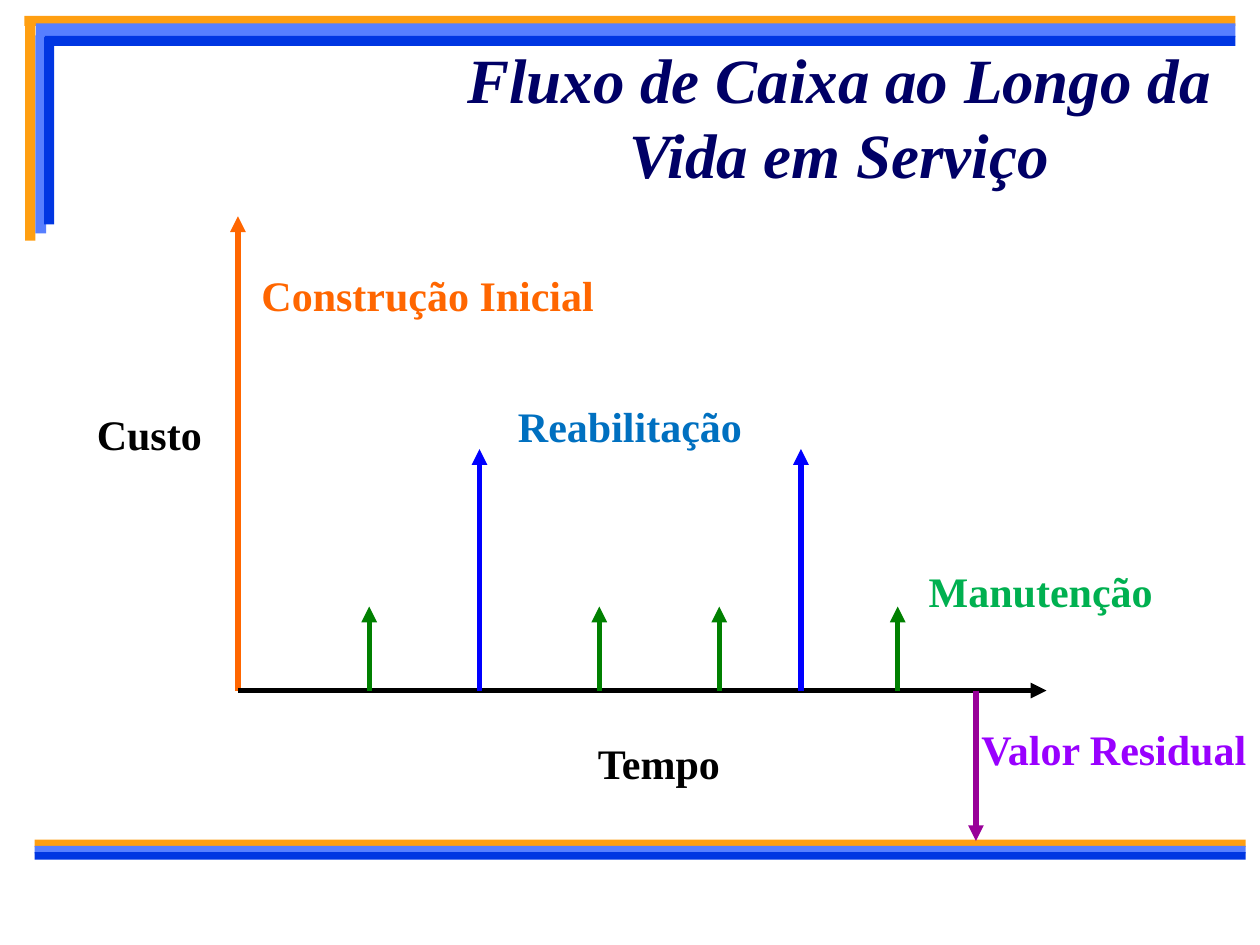
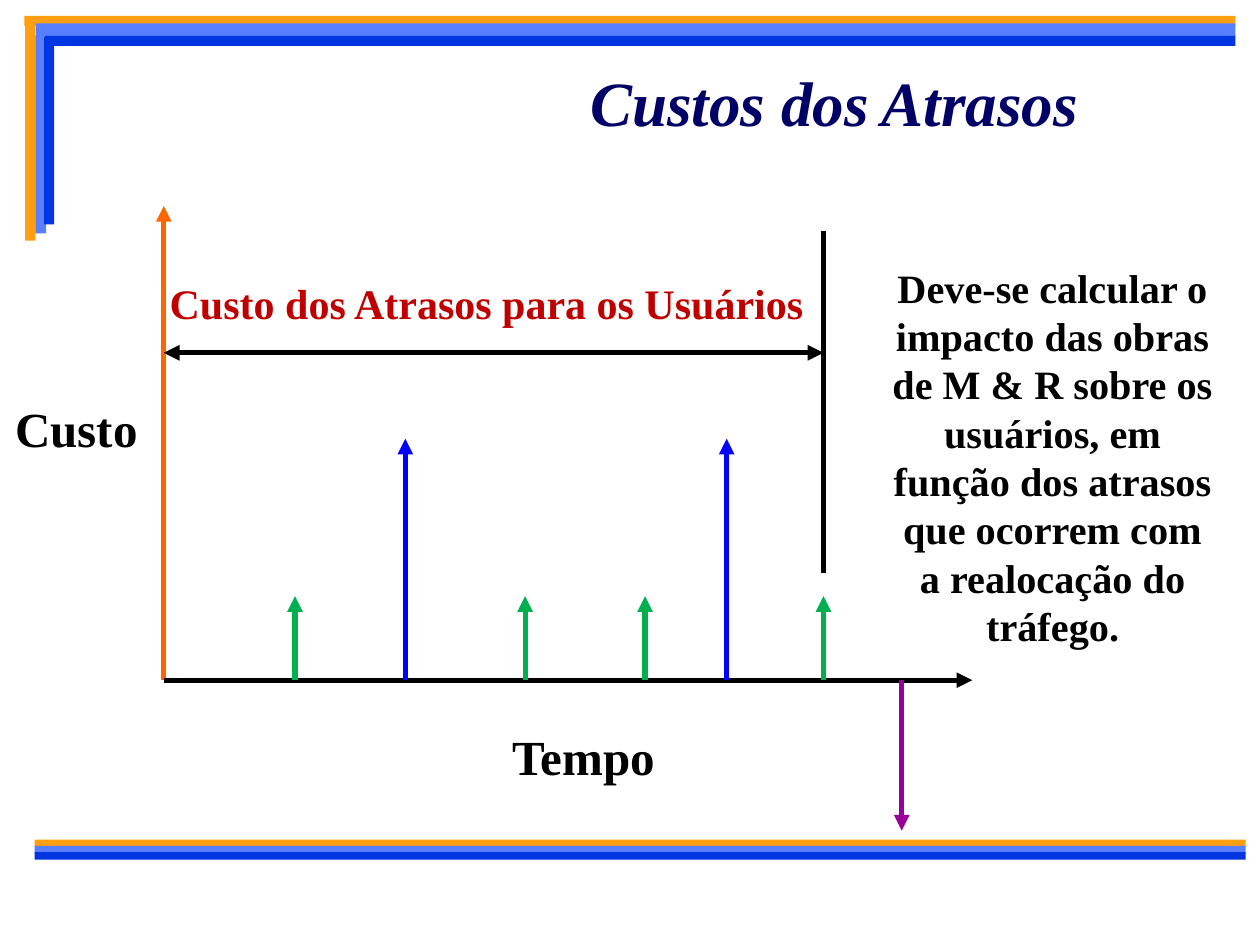
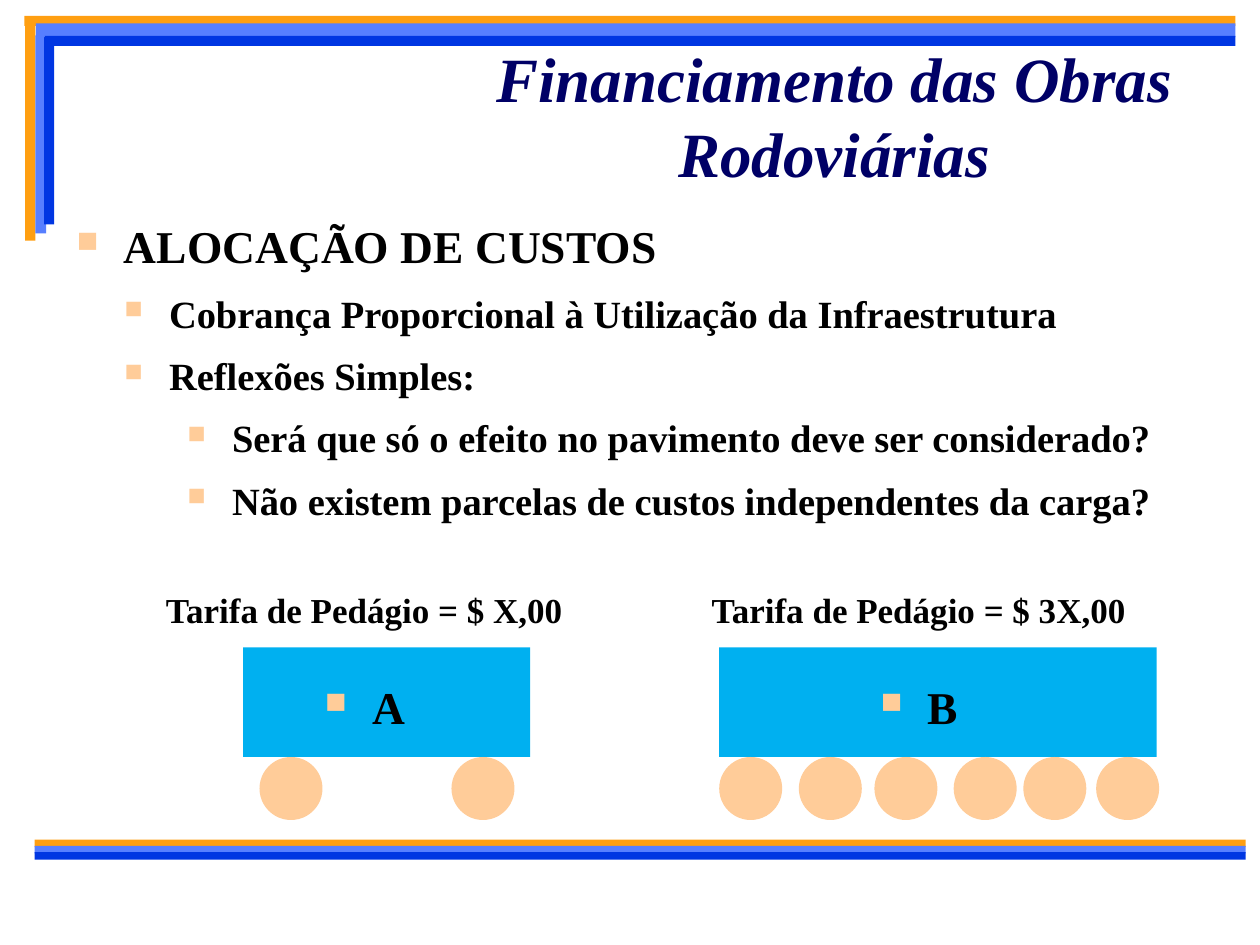
from dataclasses import dataclass

from lxml import etree
from pptx import Presentation
from pptx.dml.color import RGBColor
from pptx.enum.shapes import MSO_CONNECTOR, MSO_SHAPE
from pptx.enum.text import MSO_ANCHOR, MSO_AUTO_SIZE, PP_ALIGN
from pptx.oxml.ns import qn
from pptx.util import Pt

RECTANGLE = MSO_SHAPE.RECTANGLE
WHEEL = MSO_SHAPE.FLOWCHART_CONNECTOR
STRAIGHT = MSO_CONNECTOR.STRAIGHT
TOP, MIDDLE = MSO_ANCHOR.TOP, MSO_ANCHOR.MIDDLE
CENTER, JUSTIFY = PP_ALIGN.CENTER, PP_ALIGN.JUSTIFY
NO_FIT = MSO_AUTO_SIZE.NONE
TITLE_ONLY = 5


@dataclass(frozen=True)
class Theme:
    font: str = "Times New Roman"
    title: str = "000066"
    text: str = "000000"
    band_orange: str = "FF9F11"
    band_light: str = "577FFF"
    band_blue: str = "0036E2"
    construction: str = "FF6600"
    rehabilitation: str = "0000FF"
    rehabilitation_label: str = "0070C0"
    maintenance_dark: str = "008000"
    maintenance: str = "00B050"
    residual: str = "990099"
    residual_label: str = "9900FF"
    delay: str = "C00000"
    truck: str = "00B0F0"
    peach: str = "FFCC99"
    title_size: float = 36
    axis_size: float = 28
    heading_size: float = 26
    label_size: float = 24
    note_size: float = 23
    body_size: float = 22
    fare_size: float = 20
    line_width: float = 3


THEME = Theme()


@dataclass(frozen=True)
class Box:
    left: float
    top: float
    width: float
    height: float

    def points(self) -> tuple:
        return Pt(self.left), Pt(self.top), Pt(self.width), Pt(self.height)


@dataclass(frozen=True)
class Label:
    text: str
    box: Box
    color: str = THEME.text
    size: float = THEME.label_size


@dataclass(frozen=True)
class Bullet:
    text: str
    margin: float
    hanging: float
    size: float = THEME.body_size
    level: int = 0


@dataclass(frozen=True)
class Truck:
    name: str
    fare: str
    left: float
    width: float
    wheels: tuple
    name_left: float
    fare_left: float


# Bands: the three stripes of each edge
BANDS = [
    (THEME.band_orange, Box(14.4, 13, 5.8, 124.6)),
    (THEME.band_light, Box(20.2, 20.2, 6.2, 113.2)),
    (THEME.band_blue, Box(25.2, 20.2, 5.8, 108)),
    (THEME.band_orange, Box(14, 9, 692, 5.8)),
    (THEME.band_light, Box(20.5, 13.3, 685.5, 7.9)),
    (THEME.band_blue, Box(25.6, 20.5, 680.4, 5.8)),
    (THEME.band_orange, Box(19.8, 479.8, 692, 4.3)),
    (THEME.band_light, Box(19.8, 483.4, 692, 4.3)),
    (THEME.band_blue, Box(19.8, 487, 692, 4.3)),
]

# Cash flow: offsets from the origin and heights above the time axis
AXIS_LENGTH = 462
CONSTRUCTION_HEIGHT = 271
MAINTENANCE_HEIGHT = 48
REHABILITATION_HEIGHT = 138
RESIDUAL_DEPTH = 86
MAINTENANCE_TIMES = (75, 206.5, 275, 377)
REHABILITATION_TIMES = (138, 321.7)
RESIDUAL_TIME = 421.7

FLOW_LABELS = [
    Label("Tempo", Box(334, 417.6, 85, 36.7)),
    Label("Custo", Box(47.5, 229.7, 75.6, 36.7)),
    Label("Construção Inicial", Box(141.1, 150.5, 206.6, 36.7), THEME.construction),
    Label("Reabilitação", Box(288, 225.4, 144, 36.7), THEME.rehabilitation_label),
    Label("Manutenção", Box(522.7, 319.7, 144, 36.7), THEME.maintenance),
    Label("Valor Residual", Box(553, 409.7, 167, 36.7), THEME.residual_label),
]
DELAY_LABELS = [
    Label("Tempo", Box(285.1, 411.8, 97.2, 41), size=THEME.axis_size),
    Label("Custo", Box(0.7, 223.9, 85.7, 41), size=THEME.axis_size),
    Label("Custo dos Atrasos para os Usuários", Box(88, 154.8, 380, 36.7), THEME.delay),
]
DELAY_NOTE = (
    "Deve-se calcular o impacto das obras de M & R sobre os usuários, "
    "em função dos atrasos que ocorrem com a realocação do tráfego."
)

# Tolls: questions and the two trucks
QUESTIONS = [
    Bullet("ALOCAÇÃO DE CUSTOS", 27, 27, THEME.heading_size),
    Bullet("Cobrança Proporcional à Utilização da Infraestrutura", 52.8, 25.6, level=1),
    Bullet("Reflexões Simples:", 52.8, 25.6, level=1),
    Bullet("Será que só o efeito no pavimento deve ser considerado?", 88.8, 25.6, level=2),
    Bullet("Não existem parcelas de custos independentes da carga?", 88.8, 25.6, level=2),
]
TRUCK_TOP, TRUCK_HEIGHT, WHEEL_SIZE = 370, 62.6, 36
TRUCKS = [
    Truck("A", "Tarifa de Pedágio = $ X,00", 139, 164, (148.3, 258), 178.6, 87.8),
    Truck("B", "Tarifa de Pedágio = $ 3X,00", 411, 250,
          (411, 456.5, 499.7, 545, 584.8, 626.4), 496.1, 399.6),
]


def rgb(color: str) -> RGBColor:
    return RGBColor.from_string(color)


def add_filled(page, kind, box: Box, color: str):
    shape = page.shapes.add_shape(kind, *box.points())
    shape.shadow.inherit = False
    shape.fill.solid()
    shape.fill.fore_color.rgb = rgb(color)
    shape.line.fill.background()
    return shape


def add_line(page, start: tuple, end: tuple, color: str, head=False, tail=True) -> None:
    line = page.shapes.add_connector(STRAIGHT, *(Pt(value) for value in (*start, *end)))
    line.line.color.rgb = rgb(color)
    line.line.width = Pt(THEME.line_width)
    properties = line.element.spPr
    outline = properties.find(qn("a:ln"))
    for wanted, tag in ((head, "a:headEnd"), (tail, "a:tailEnd")):
        if wanted:
            etree.SubElement(outline, qn(tag), type="triangle")
    etree.SubElement(properties, qn("a:effectLst"))


def write_text(frame, text: str, *, size: float, color=THEME.text, italic=False,
               align=CENTER, anchor=TOP, wrap=True, spacing=None, new_para=False):
    """Write one bold paragraph into a text frame and return it."""
    frame.word_wrap = wrap
    frame.auto_size = NO_FIT
    frame.vertical_anchor = anchor
    para = frame.add_paragraph() if new_para else frame.paragraphs[0]
    para.alignment = align
    if spacing:
        para.line_spacing = spacing
        para.space_after = Pt(size * 0.1)
    if new_para:
        para.space_before = Pt(size * 0.2)
    span = para.add_run()
    span.text = text
    span.font.name = THEME.font
    span.font.size = Pt(size)
    span.font.bold = True
    span.font.italic = italic
    span.font.color.rgb = rgb(color)
    return para


def add_text(page, box: Box, text: str, **style) -> None:
    write_text(page.shapes.add_textbox(*box.points()).text_frame, text, **style)


def add_labels(page, labels: list) -> None:
    for label in labels:
        add_text(page, label.box, label.text, size=label.size, color=label.color, wrap=False)


def add_bullets(page, box: Box, bullets: list) -> None:
    frame = page.shapes.add_textbox(*box.points()).text_frame
    for index, bullet in enumerate(bullets):
        para = write_text(frame, bullet.text, size=bullet.size, align=JUSTIFY,
                          spacing=1.1, new_para=index > 0)
        para.level = bullet.level
        properties = para._p.get_or_add_pPr()
        properties.set("marL", str(Pt(bullet.margin)))
        properties.set("indent", str(-Pt(bullet.hanging)))
        bullet_color = etree.SubElement(properties, qn("a:buClr"))
        etree.SubElement(bullet_color, qn("a:srgbClr"), val=THEME.peach)
        etree.SubElement(properties, qn("a:buSzPct"), val="65000")
        etree.SubElement(properties, qn("a:buChar"), char="■")


def add_page(deck, title: str, box: Box):
    page = deck.slides.add_slide(deck.slide_layouts[TITLE_ONLY])
    holder = page.shapes.title
    holder.left, holder.top, holder.width, holder.height = box.points()
    write_text(holder.text_frame, title, size=THEME.title_size, color=THEME.title,
               italic=True, anchor=MIDDLE)
    return page


def move_bands_to_layout(page) -> None:
    """Draw the bands once and hand them to the layout that all pages share."""
    layout = page.slide_layout
    for holder in list(layout.placeholders)[1:]:
        holder.element.getparent().remove(holder.element)
    for color, box in BANDS:
        layout.shapes.element.append(add_filled(page, RECTANGLE, box, color).element)


def add_cash_flow(page, left: float, base: float, maintenance: str) -> None:
    def cost(time: float, height: float, color: str) -> None:
        add_line(page, (left + time, base), (left + time, base - height), color)

    cost(0, CONSTRUCTION_HEIGHT, THEME.construction)
    add_line(page, (left, base), (left + AXIS_LENGTH, base), THEME.text)
    for time in MAINTENANCE_TIMES:
        cost(time, MAINTENANCE_HEIGHT, maintenance)
    for time in REHABILITATION_TIMES:
        cost(time, REHABILITATION_HEIGHT, THEME.rehabilitation)
    cost(RESIDUAL_TIME, -RESIDUAL_DEPTH, THEME.residual)


def add_truck(page, truck: Truck) -> None:
    add_filled(page, RECTANGLE, Box(truck.left, TRUCK_TOP, truck.width, TRUCK_HEIGHT),
               THEME.truck)
    for left in truck.wheels:
        add_filled(page, WHEEL,
                   Box(left, TRUCK_TOP + TRUCK_HEIGHT, WHEEL_SIZE, WHEEL_SIZE), THEME.peach)
    add_bullets(page, Box(truck.name_left, 381.6, 79.2, 39.6),
                [Bullet(truck.name, 27, 27, THEME.heading_size)])
    add_text(page, Box(truck.fare_left, 330.5, 266.4, 39.6), truck.fare,
             size=THEME.fare_size, align=JUSTIFY, spacing=1.1)


def build_flow_page(deck) -> None:
    page = add_page(deck, "Fluxo de Caixa ao Longo da Vida em Serviço",
                    Box(249.8, 25.9, 459.4, 80.6))
    move_bands_to_layout(page)
    add_cash_flow(page, 136, 394.6, THEME.maintenance_dark)
    add_labels(page, FLOW_LABELS)


def build_delay_page(deck) -> None:
    left, delay_end, delay_top = 93.6, 470.6, 201.6
    page = add_page(deck, "Custos dos Atrasos", Box(247, 25.9, 459.4, 64.1))
    add_cash_flow(page, left, 388.7, THEME.maintenance)
    add_labels(page, DELAY_LABELS)
    add_line(page, (delay_end, 327.6), (delay_end, 131.8), THEME.text, tail=False)
    add_line(page, (left, delay_top), (delay_end, delay_top), THEME.text, head=True)
    add_text(page, Box(500.4, 146.9, 202.3, 230.4), DELAY_NOTE, size=THEME.note_size)


def build_toll_page(deck) -> None:
    page = add_page(deck, "Financiamento das Obras Rodoviárias",
                    Box(247, 31.7, 459.4, 67.7))
    add_bullets(page, Box(36.7, 118.1, 668.9, 191.5), QUESTIONS)
    for truck in TRUCKS:
        add_truck(page, truck)


def main() -> None:
    deck = Presentation()
    deck.slide_width, deck.slide_height = Pt(720), Pt(540)
    build_flow_page(deck)
    build_delay_page(deck)
    build_toll_page(deck)
    deck.save("out.pptx")


if __name__ == "__main__":
    main()
